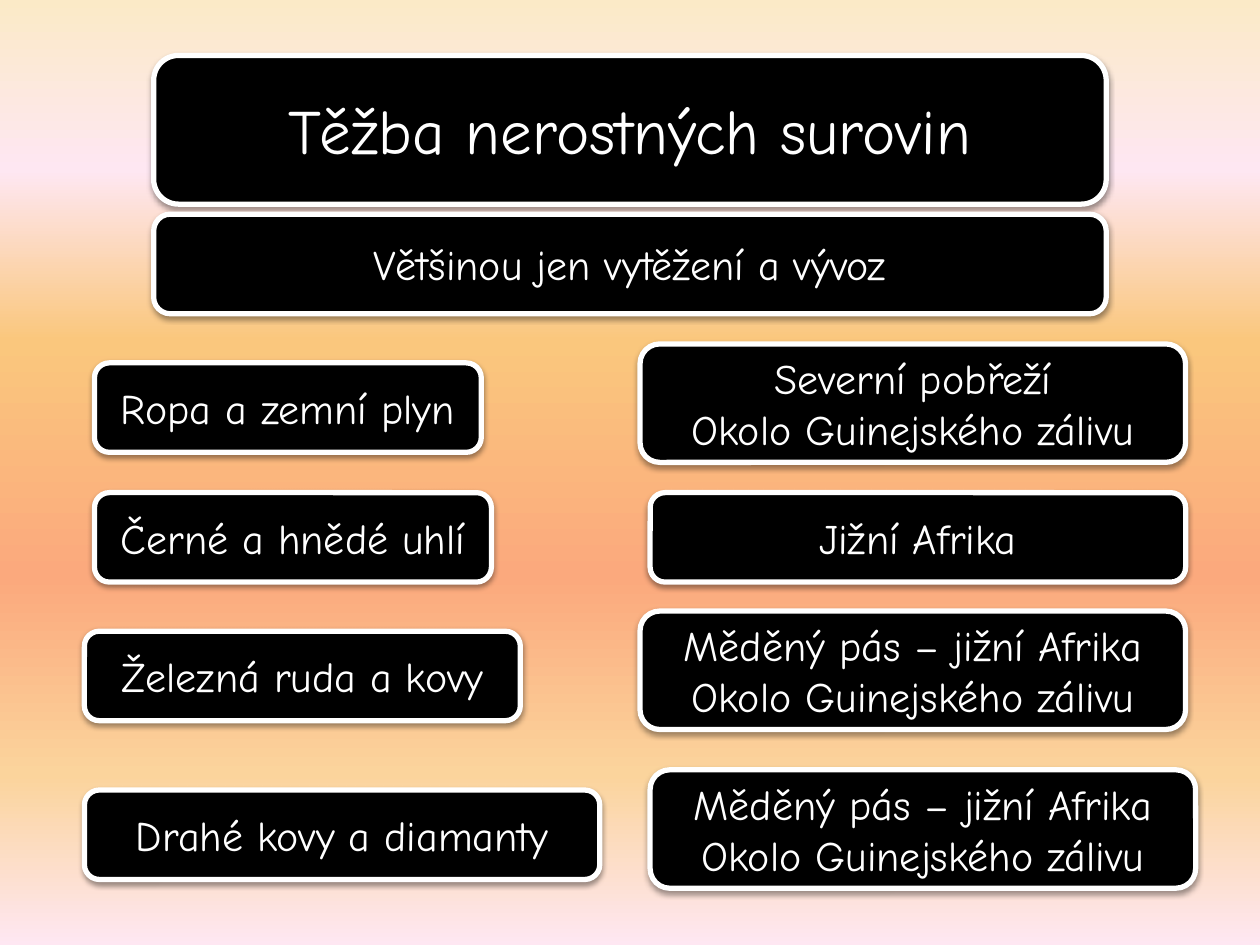
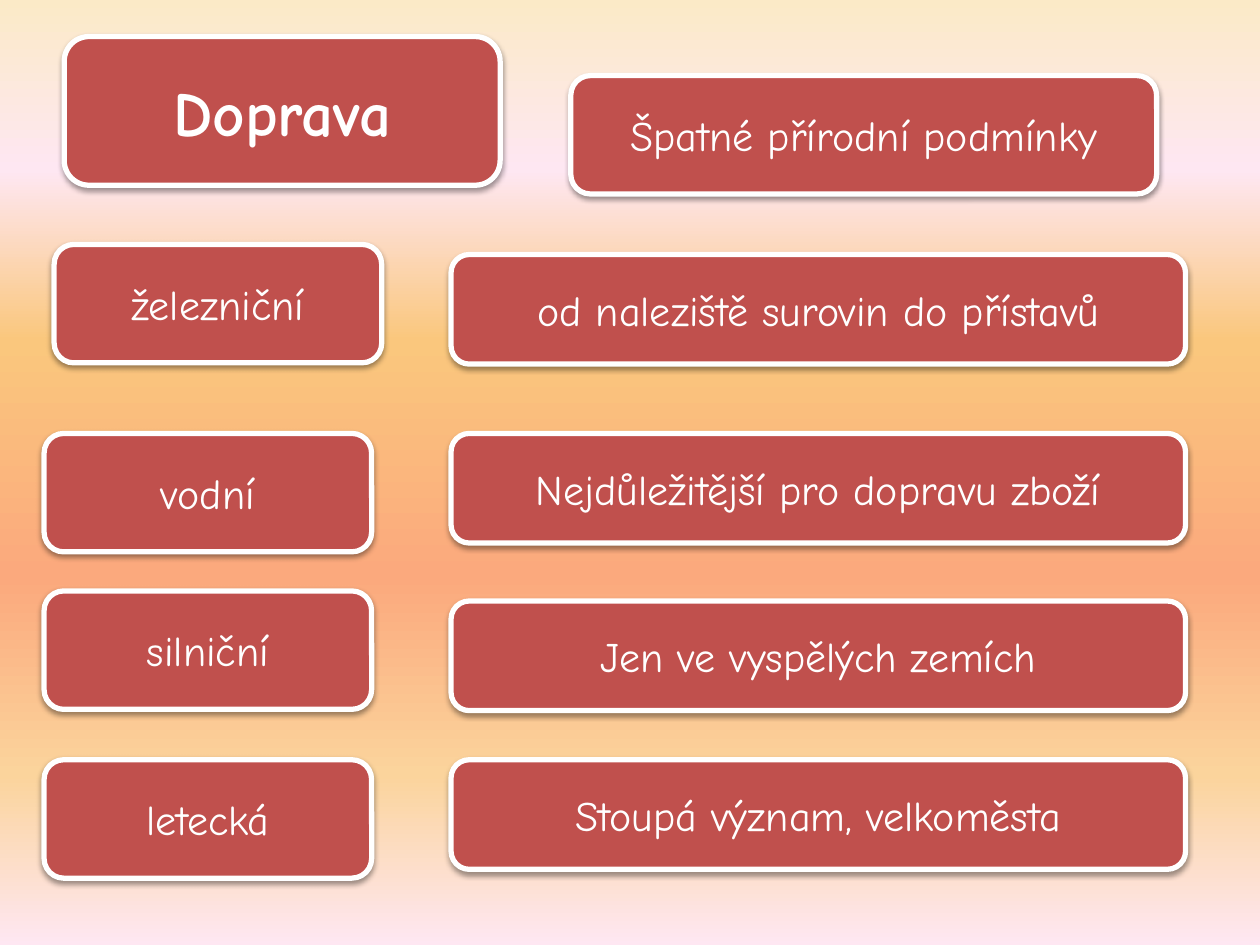
import pptx
import pptx.dml.color
import pptx.enum.shapes
import pptx.enum.text
import pptx.oxml
import pptx.oxml.ns
import pptx.util
from lxml import etree

FONT = "Comic Neue"
WHITE, BLACK, BRICK = "FFFFFF", "000000", "C0504D"
SUNSET = [(0, "FBEAC7"), (18, "FEE7F2"), (36, "FAC77D"),
          (61, "FBA97D"), (82, "FBD49C"), (100, "FEE7F2")]
TITLE = {"size": pptx.util.Pt(36)}
BOLD_TITLE = {"size": pptx.util.Pt(36), "bold": True}
BODY = {"size": pptx.util.Pt(24)}
SHADOW = (
    f'<a:outerShdw {pptx.oxml.ns.nsdecls("a")} blurRad="40000" dist="20000" '
    'dir="5400000" rotWithShape="0">'
    f'<a:srgbClr val="{BLACK}"><a:alpha val="38000"/></a:srgbClr></a:outerShdw>'
)


def rgb(value):
    return pptx.dml.color.RGBColor.from_string(value)


def add_card(slide, fill, box, text, font_format=BODY):
    card = slide.shapes.add_shape(
        pptx.enum.shapes.MSO_SHAPE.ROUNDED_RECTANGLE,
        *[pptx.util.Inches(length) for length in box])
    card.fill.solid()
    card.fill.fore_color.rgb = rgb(fill)
    card.line.color.rgb = rgb(WHITE)
    card.line.width = pptx.util.Pt(3)
    card.shadow.inherit = False
    effects = card.element.spPr.find(pptx.oxml.ns.qn("a:effectLst"))
    effects.append(pptx.oxml.parse_xml(SHADOW))

    frame = card.text_frame
    frame.word_wrap = True
    frame.vertical_anchor = pptx.enum.text.MSO_ANCHOR.MIDDLE
    frame.text = text
    for paragraph in frame.paragraphs:
        paragraph.alignment = pptx.enum.text.PP_ALIGN.CENTER
        paragraph.font.color.rgb = rgb(WHITE)
        for name, value in {"name": FONT, **font_format}.items():
            setattr(paragraph.font, name, value)


deck = pptx.Presentation()
deck.slide_width = pptx.util.Inches(10)
deck.slide_height = pptx.util.Inches(7.5)
blank = deck.slide_layouts[6]

# Sunset gradient shared by both slides, running from top to bottom
sky = deck.slide_master.background.fill
sky.gradient()
sky.gradient_angle = 270
stops = deck.slide_master.element.xpath("./p:cSld/p:bg//a:gsLst")[0]
for old_stop in list(stops):
    stops.remove(old_stop)
for percent, colour in SUNSET:
    stop = etree.SubElement(stops, pptx.oxml.ns.qn("a:gs"), pos=str(percent * 1000))
    etree.SubElement(stop, pptx.oxml.ns.qn("a:srgbClr"), val=colour)

# Slide 1: mining, each raw material beside its regions
mining = deck.slides.add_slide(blank)
add_card(mining, BLACK, (1.22, 0.44, 7.56, 1.18), "Těžba nerostných surovin", TITLE)
add_card(mining, BLACK, (1.22, 1.7, 7.56, 0.79), "Většinou jen vytěžení a vývoz")

gulf = "Okolo Guinejského zálivu"
copper_belt = "Měděný pás – jižní Afrika\n" + gulf
minerals = [
    ("Ropa a zemní plyn", (0.75, 2.88, 3.07, 0.71),
     "Severní pobřeží\n" + gulf, (5.08, 2.73, 4.33, 0.94)),
    ("Černé a hnědé uhlí", (0.75, 3.91, 3.15, 0.71),
     "Jižní Afrika", (5.16, 3.91, 4.25, 0.71)),
    ("Železná ruda a kovy", (0.67, 5.01, 3.46, 0.71),
     copper_belt, (5.08, 4.85, 4.33, 0.94)),
    ("Drahé kovy a diamanty", (0.67, 6.27, 4.09, 0.71),
     copper_belt, (5.16, 6.11, 4.33, 0.94)),
]
for mineral, mineral_box, regions, regions_box in minerals:
    add_card(mining, BLACK, mineral_box, mineral)
    add_card(mining, BLACK, regions_box, regions)

# Slide 2: transport, each kind beside its role
transport = deck.slides.add_slide(blank)
add_card(transport, BRICK, (0.51, 0.29, 3.46, 1.18), "Doprava", BOLD_TITLE)
add_card(transport, BRICK, (4.53, 0.6, 4.65, 0.94), "Špatné přírodní podmínky")

kinds = [
    ("železniční", 0.43, 1.94, "od naleziště surovin do přístavů", 2.02),
    ("vodní", 0.35, 3.44, "Nejdůležitější pro dopravu zboží", 3.44),
    ("silniční", 0.35, 4.69, "Jen ve vyspělých zemích", 4.77),
    ("letecká", 0.35, 6.03, "Stoupá význam, velkoměsta", 6.03),
]
for kind, kind_left, kind_top, role, role_top in kinds:
    add_card(transport, BRICK, (kind_left, kind_top, 2.6, 0.94), kind)
    add_card(transport, BRICK, (3.58, role_top, 5.83, 0.87), role)

deck.save("out.pptx")
